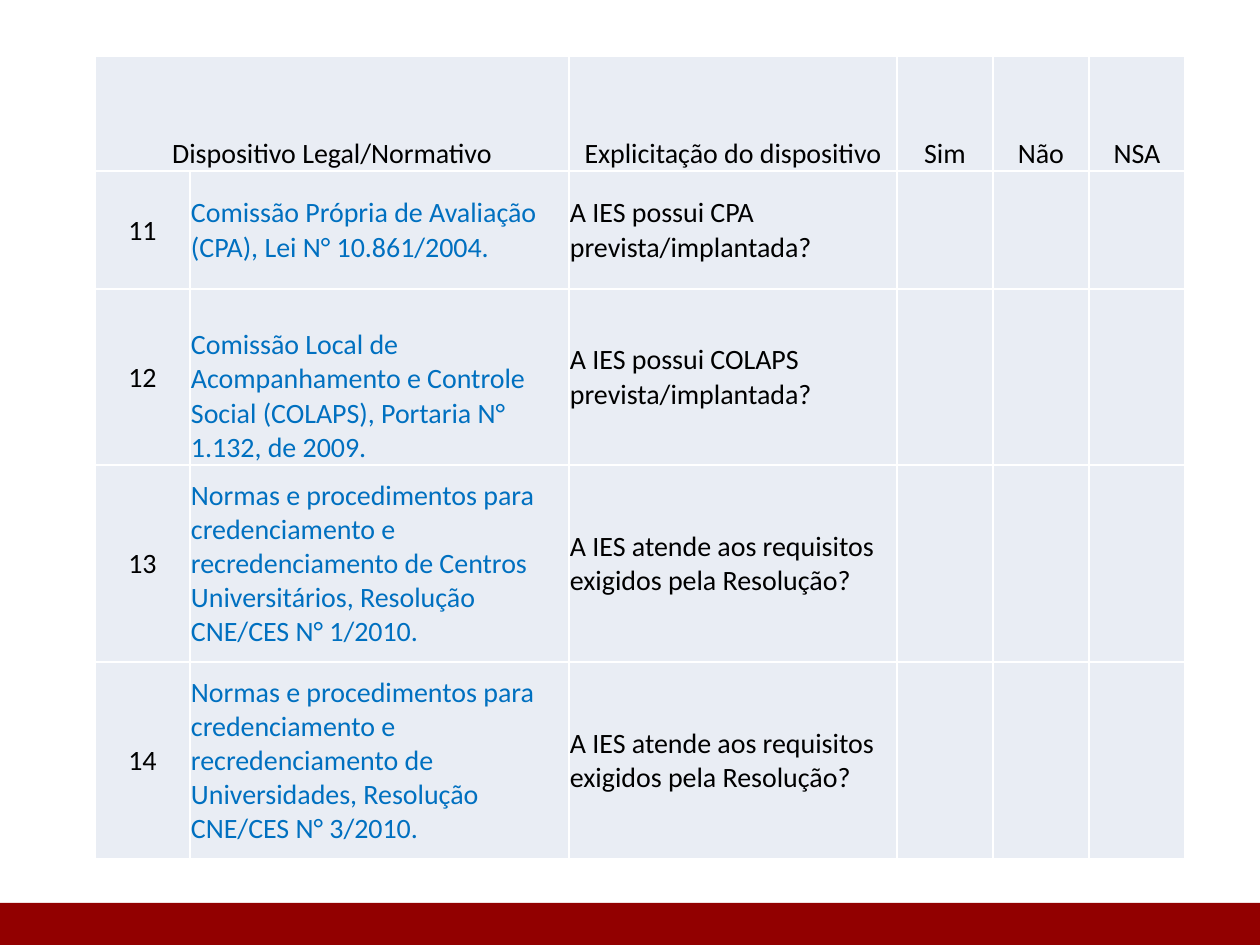
import pptx
import pptx.util
import pptx.oxml
import pptx.dml.color
import pptx.enum.text
import pptx.enum.shapes

PX = 914400 // 126
ANCHOR = pptx.enum.text.MSO_ANCHOR
ALIGN = pptx.enum.text.PP_ALIGN
COLORS = {"cell": "E9EDF4", "text": "000000", "law": "0070C0", "border": "FFFFFF", "bar": "920000"}
NAMESPACE = "http://schemas.openxmlformats.org/drawingml/2006/main"


def write_text(cell, text, color="text", align=ALIGN.LEFT, anchor=ANCHOR.MIDDLE):
    cell.vertical_anchor = anchor
    paragraph = cell.text_frame.paragraphs[0]
    paragraph.alignment = align
    run = paragraph.add_run()
    run.text = text
    run.font.name = "Calibri"
    run.font.size = pptx.util.Pt(16)
    run.font.color.rgb = pptx.dml.color.RGBColor.from_string(COLORS[color])


def style_cell(cell):
    cell.margin_left = cell.margin_right = cell.margin_top = PX
    cell.margin_bottom = 0
    properties = cell._tc.get_or_add_tcPr()
    for side in ("lnL", "lnR", "lnT", "lnB"):
        properties.append(pptx.oxml.parse_xml(
            f'<a:{side} xmlns:a="{NAMESPACE}" w="12700"><a:solidFill>'
            f'<a:srgbClr val="{COLORS["border"]}"/></a:solidFill></a:{side}>'))
    cell.fill.solid()
    cell.fill.fore_color.rgb = pptx.dml.color.RGBColor.from_string(COLORS["cell"])


presentation = pptx.Presentation()
presentation.slide_width = 1260 * PX
presentation.slide_height = 945 * PX
slide = presentation.slides.add_slide(presentation.slide_layouts[6])

column_widths = [95, 379, 328, 96, 96, 96]
row_heights = [115, 118, 176, 197, 197]
headers = {0: "Dispositivo Legal/Normativo", 2: "Explicitação do dispositivo", 3: "Sim", 4: "Não", 5: "NSA"}
requirements = [
    ("Comissão Própria de Avaliação (CPA), Lei N° 10.861/2004.",
     "A IES possui CPA prevista/implantada?", ANCHOR.MIDDLE),
    ("Comissão Local de Acompanhamento e Controle Social (COLAPS), Portaria N° 1.132, de 2009.",
     "A IES possui COLAPS prevista/implantada?", ANCHOR.BOTTOM),
    ("Normas e procedimentos para credenciamento e recredenciamento de Centros Universitários, "
     "Resolução CNE/CES N° 1/2010.",
     "A IES atende aos requisitos exigidos pela Resolução?", ANCHOR.MIDDLE),
    ("Normas e procedimentos para credenciamento e recredenciamento de Universidades, "
     "Resolução CNE/CES N° 3/2010.",
     "A IES atende aos requisitos exigidos pela Resolução?", ANCHOR.MIDDLE),
]

table = slide.shapes.add_table(
    len(row_heights), len(column_widths), 95 * PX, 56 * PX,
    sum(column_widths) * PX, sum(row_heights) * PX).table
table.first_row = False
table.horz_banding = False
for column, width in zip(table.columns, column_widths):
    column.width = width * PX
for row, height in zip(table.rows, row_heights):
    row.height = height * PX
for cell in table.iter_cells():
    style_cell(cell)
table.cell(0, 0).merge(table.cell(0, 1))

for column_index, header in headers.items():
    write_text(table.cell(0, column_index), header, align=ALIGN.CENTER, anchor=ANCHOR.BOTTOM)
for row_index, (law, question, law_anchor) in enumerate(requirements, start=1):
    write_text(table.cell(row_index, 0), str(10 + row_index), align=ALIGN.CENTER)
    write_text(table.cell(row_index, 1), law, color="law", anchor=law_anchor)
    write_text(table.cell(row_index, 2), question)

footer_bar = slide.shapes.add_shape(
    pptx.enum.shapes.MSO_SHAPE.RECTANGLE, 0, 903 * PX, 1260 * PX, 45 * PX)
footer_bar.shadow.inherit = False
footer_bar.fill.solid()
footer_bar.fill.fore_color.rgb = pptx.dml.color.RGBColor.from_string(COLORS["bar"])
footer_bar.line.fill.background()

presentation.save("out.pptx")
